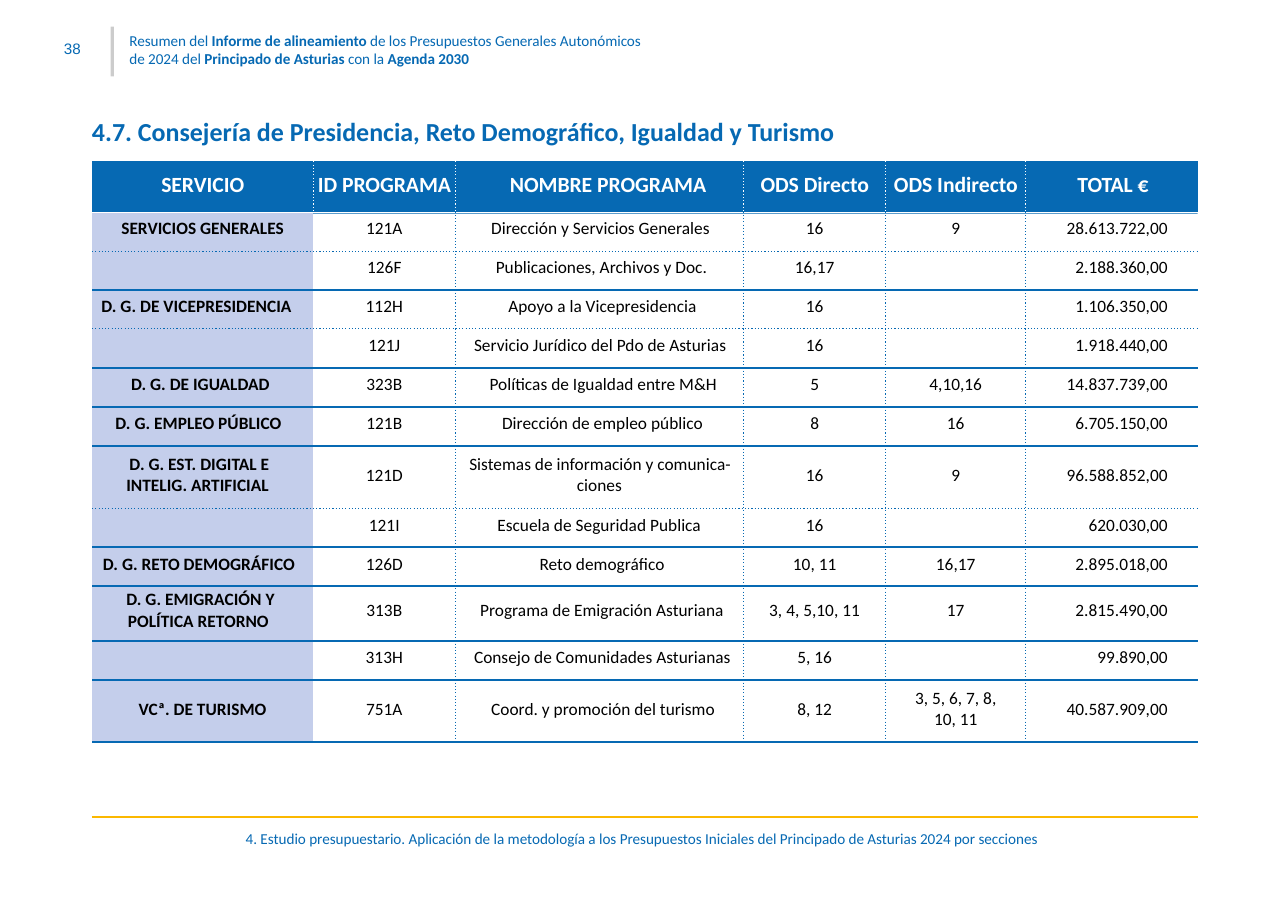
from dataclasses import dataclass

from lxml.etree import SubElement as Sub
from pptx import Presentation
from pptx.dml.color import RGBColor
from pptx.enum.shapes import MSO_CONNECTOR as Link, MSO_SHAPE as Form
from pptx.enum.text import PP_ALIGN as Align
from pptx.oxml.ns import qn
from pptx.util import Inches, Pt

BLUE, PALE, GOLD, WHITE, BLACK = "0669B3", "C4CEEB", "FBB800", "FFFFFF", "000000"
LEFT, TOP, WIDE = 0.59, 1.04, 7.09
WIDTHS = (1.42, 0.91, 1.85, 0.91, 0.9, 1.1)
FLAT = {"margin_left": 0, "margin_right": 0, "margin_top": Inches(0.01),
        "margin_bottom": 0, "word_wrap": True}


@dataclass
class Label:
    """Text box; words between asterisks are bold."""
    text: str
    box: tuple[float, float, float, float]
    size: float = 7
    face: str = "Calibri"
    align: Align = Align.LEFT


@dataclass
class Cell:
    """Cell text, centred unless a left indent is given."""
    text: str
    indent: float | None = None
    hang: float = 0


@dataclass
class Row:
    unit: Cell
    code: str
    name: Cell
    direct: str
    other: str
    total: Cell
    height: float = 0.25
    dots: bool = False

    def cells(self) -> list[Cell]:
        return [self.unit, Cell(self.code), self.name,
                Cell(self.direct), Cell(self.other), self.total]


@dataclass
class Edge:
    color: str
    width: float
    dots: bool = False


LABELS = [
    Label("Resumen del *Informe de alineamiento* de los Presupuestos Generales "
          "Autonómicos\vde 2024 del *Principado de Asturias* con la *Agenda 2030*",
          (0.83, 0.19, 3.36, 0.25)),
    Label("38", (0.41, 0.24, 0.12, 0.14), face="Arial"),
    Label("*4.7. Consejería de Presidencia, Reto Demográfico, Igualdad y Turismo*",
          (LEFT, 0.73, 5.56, 0.22), 12),
    Label("4. Estudio presupuestario. Aplicación de la metodología a los Presupuestos "
          "Iniciales del Principado de Asturias 2024 por secciones",
          (0.6, 5.31, 7.03, 0.12), align=Align.CENTER),
]

ROWS = [
    Row(Cell("SERVICIO"), "ID PROGRAMA", Cell("NOMBRE PROGRAMA", 0.35),
        "ODS Directo", "ODS Indirecto", Cell("TOTAL €", 0.33), 0.32),
    Row(Cell("SERVICIOS GENERALES"), "121A", Cell("Dirección y Servicios Generales", 0.23),
        "16", "9", Cell("28.613.722,00"), dots=True),
    Row(Cell(""), "126F", Cell("Publicaciones, Archivos y Doc.", 0.26),
        "16,17", "", Cell("2.188.360,00")),
    Row(Cell("D. G. DE VICEPRESIDENCIA", 0.06), "112H",
        Cell("Apoyo a la Vicepresidencia", 0.34),
        "16", "", Cell("1.106.350,00"), dots=True),
    Row(Cell(""), "121J", Cell("Servicio Jurídico del Pdo de Asturias", 0.12),
        "16", "", Cell("1.918.440,00")),
    Row(Cell("D. G. DE IGUALDAD", 0.25), "323B", Cell("Políticas de Igualdad entre M&H", 0.22),
        "5", "4,10,16", Cell("14.837.739,00")),
    Row(Cell("D. G. EMPLEO PÚBLICO", 0.15), "121B", Cell("Dirección de empleo público", 0.3),
        "8", "16", Cell("6.705.150,00")),
    Row(Cell("D. G. EST. DIGITAL E\vINTELIG. ARTIFICIAL", 0.22, 0.02), "121D",
        Cell("Sistemas de información y comunica-\vciones", 0.78, -0.69),
        "16", "9", Cell("96.588.852,00"), 0.4, True),
    Row(Cell(""), "121I", Cell("Escuela de Seguridad Publica", 0.27),
        "16", "", Cell("620.030,00")),
    Row(Cell("D. G. RETO DEMOGRÁFICO", 0.07), "126D", Cell("Reto demográfico", 0.54),
        "10, 11", "16,17", Cell("2.895.018,00")),
    Row(Cell("D. G. EMIGRACIÓN Y\vPOLÍTICA RETORNO", 0.23, -0.01), "313B",
        Cell("Programa de Emigración Asturiana", 0.16),
        "3, 4, 5,10, 11", "17", Cell("2.815.490,00"), 0.35),
    Row(Cell(""), "313H", Cell("Consejo de Comunidades Asturianas", 0.12),
        "5, 16", "", Cell("99.890,00")),
    Row(Cell("VCª. DE TURISMO"), "751A", Cell("Coord. y promoción del turismo", 0.23),
        "8, 12", "3, 5, 6, 7, 8,\v10, 11", Cell("40.587.909,00"), 0.4),
]


def rgb(code: str) -> RGBColor:
    return RGBColor.from_string(code)


def put(target, values: dict) -> None:
    for key, value in values.items():
        setattr(target, key, value)


def write(para, text: str, size: float, color: str, face: str = "Calibri") -> None:
    """Fill a paragraph, turning bold on and off at each asterisk."""
    for spot, part in enumerate(text.split("*")):
        for step, line in enumerate(part.split("\v")):
            if step:
                para.add_line_break()
            if line:
                run = para.add_run()
                run.text = line
                put(run.font, {"size": Pt(size), "name": face, "bold": spot % 2 == 1})
                run.font.color.rgb = rgb(color)
    Sub(para._p, qn("a:endParaRPr"), sz=str(int(size * 100)))


def add_label(shapes, item: Label) -> None:
    frame = shapes.add_textbox(*map(Inches, item.box)).text_frame
    put(frame, FLAT)
    para = frame.paragraphs[0]
    para.alignment = item.align
    write(para, item.text, item.size, BLUE, item.face)


def add_bar(shapes, box: tuple[float, float, float, float], color: str):
    bar = shapes.add_shape(Form.RECTANGLE, *map(Inches, box))
    bar.shadow.inherit = False
    bar.fill.solid()
    bar.fill.fore_color.rgb = rgb(color)
    bar.line.fill.background()
    return bar


def add_edge(cell, side: str, edge: Edge | None) -> None:
    width = Pt(edge.width) if edge else 0
    line = Sub(cell._tc.get_or_add_tcPr(), qn(f"a:ln{side}"), w=str(int(width)))
    if edge is None:
        Sub(line, qn("a:noFill"))
        return
    Sub(Sub(line, qn("a:solidFill")), qn("a:srgbClr"), val=edge.color)
    Sub(line, qn("a:prstDash"), val="sysDot" if edge.dots else "solid")


def under(index: int) -> Edge:
    """Rule below a row; index -1 is the top of the table."""
    if index == 0:
        return Edge(WHITE, 0.5)
    dots = index > 0 and ROWS[index].dots
    return Edge(BLUE, 0.5 if dots else 1, dots)


def beside(row: int, col: int) -> Edge | None:
    """Rule on the left of a column."""
    if col in (0, len(WIDTHS)) or (row and col == 1):
        return None
    return Edge(BLUE if row else WHITE, 0.5, True)


def fill_cell(cell, item: Cell, row: int, col: int) -> None:
    head, first, last = row == 0, col == 0, col == len(WIDTHS) - 1
    size = 10 if head else 8
    lines = item.text.count("\v") + 1
    inset = (ROWS[row].height - lines * size * 1.22 / 72) / 2 - 0.015
    money = last and not head
    put(cell, {"margin_left": 0, "margin_right": Inches(0.19 if money else 0),
               "margin_top": Inches(round(inset, 2)), "margin_bottom": 0})
    edges = {"L": beside(row, col), "R": beside(row, col + 1),
             "T": under(row - 1), "B": under(row)}
    for side, edge in edges.items():
        add_edge(cell, side, edge)
    if head or first:
        cell.fill.solid()
        cell.fill.fore_color.rgb = rgb(BLUE if head else PALE)
    else:
        cell.fill.background()
    para = cell.text_frame.paragraphs[0]
    para.alignment = Align.RIGHT if money else Align.CENTER
    if item.indent is not None:
        para.alignment = Align.LEFT
        props = para._p.get_or_add_pPr()
        props.set("marL", str(Inches(item.indent)))
        props.set("indent", str(Inches(item.hang)))
    text = f"*{item.text}*" if head or first else item.text
    write(para, text, size, WHITE if head else BLACK)


def add_grid(shapes) -> None:
    high = sum(row.height for row in ROWS)
    box = map(Inches, (LEFT, TOP, WIDE, high))
    grid = shapes.add_table(len(ROWS), len(WIDTHS), *box).table
    put(grid, {"first_row": False, "horz_banding": False})
    for col, width in zip(grid.columns, WIDTHS):
        col.width = Inches(width)
    for r, row in enumerate(ROWS):
        grid.rows[r].height = Inches(row.height)
        for c, item in enumerate(row.cells()):
            fill_cell(grid.cell(r, c), item, r, c)


def main() -> None:
    deck = Presentation()
    put(deck, {"slide_width": Inches(8.26), "slide_height": Inches(5.83)})
    shapes = deck.slides.add_slide(deck.slide_layouts[6]).shapes
    ends = map(Inches, (LEFT, 5.24, LEFT + WIDE, 5.24))
    rule = shapes.add_connector(Link.STRAIGHT, *ends)
    rule.line.color.rgb = rgb(GOLD)
    rule.line.width = Pt(1)
    Sub(rule._element.spPr, qn("a:effectLst"))
    mark = add_bar(shapes, (0.71, 0.17, 0.02, 0.32), BLACK)
    tint = mark._element.spPr.find(".//" + qn("a:srgbClr"))
    Sub(tint, qn("a:alpha"), val="20000")
    add_bar(shapes, (LEFT, TOP, WIDE, 0.33), BLUE)
    add_grid(shapes)
    for item in LABELS:
        add_label(shapes, item)
    deck.save("out.pptx")


if __name__ == "__main__":
    main()
